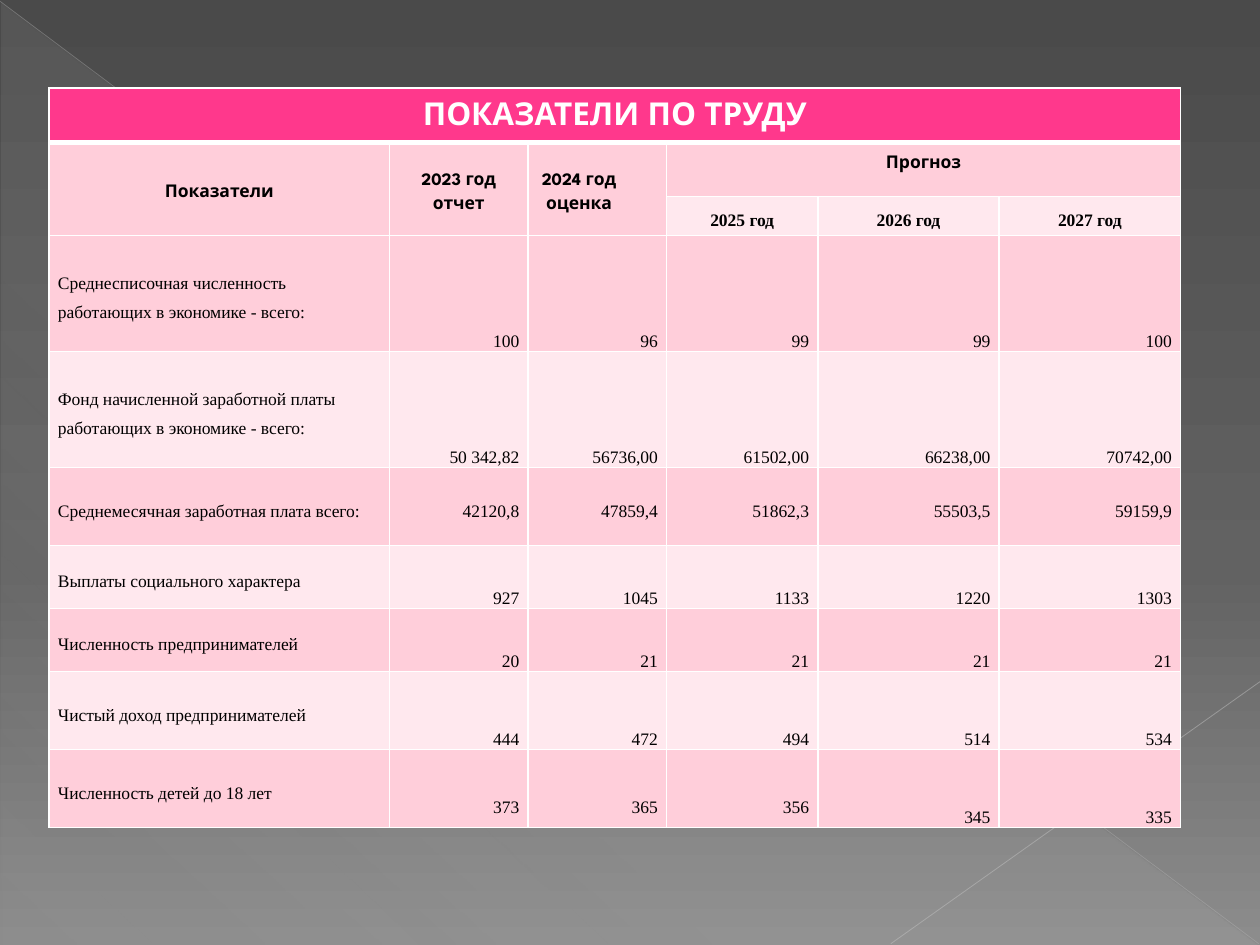
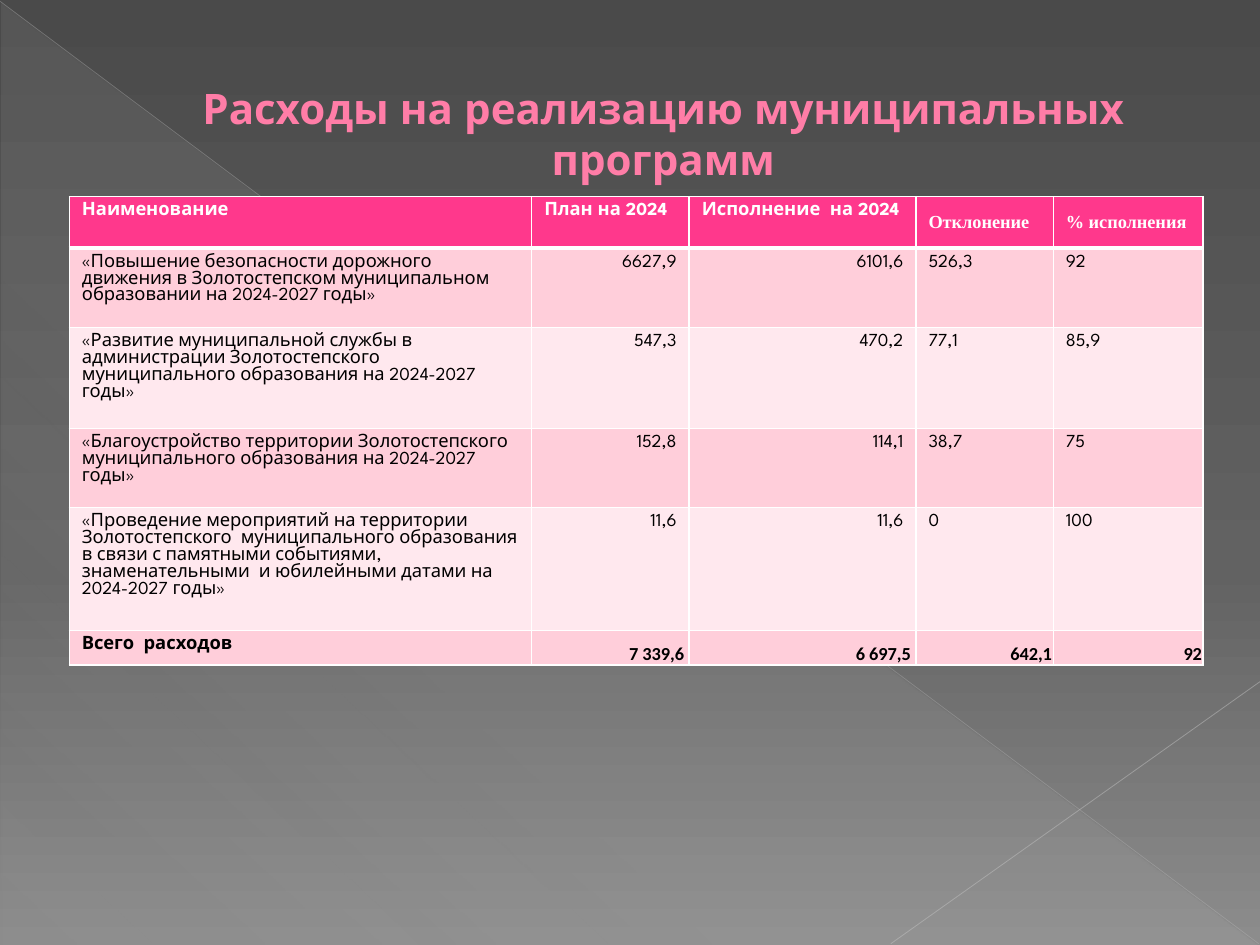
from typing import NamedTuple

from lxml.etree import SubElement
from pptx import Presentation
from pptx.dml.color import RGBColor
from pptx.enum.shapes import MSO_CONNECTOR as Connector, MSO_SHAPE as Shape
from pptx.enum.text import MSO_ANCHOR as Anchor, PP_ALIGN as Align
from pptx.oxml.ns import qn
from pptx.util import Inches, Pt

WHITE = RGBColor(0xFF, 0xFF, 0xFF)
BLACK = RGBColor(0, 0, 0)
HOT_PINK = RGBColor(0xFF, 0x38, 0x8C)
PINK = RGBColor(0xFF, 0xCE, 0xDA)
PALE_PINK = RGBColor(0xFF, 0xE8, 0xEE)
TITLE_PINK = RGBColor(0xFF, 0x7D, 0xA7)
TITLE_EDGE = RGBColor(0xB1, 0x27, 0x61)
DARK_GREY = RGBColor(0x4A, 0x4A, 0x4A)
MID_GREY = RGBColor(0x62, 0x62, 0x62)
LIGHT_GREY = RGBColor(0x8C, 0x8C, 0x8C)
VEIL = RGBColor(0xD2, 0xD2, 0xD2)
DIAGONAL = RGBColor(0xBF, 0xBF, 0xBF)
SHORT_DIAGONAL = RGBColor(0xC6, 0xC6, 0xC6)

DISPLAY = "League Spartan"
SERIF = "Times New Roman"


class Style(NamedTuple):
    font: str = DISPLAY
    size: float = 10
    colour: RGBColor = BLACK
    bold: bool = False
    align: Align = Align.LEFT
    anchor: Anchor = Anchor.TOP
    spacing: float = 1
    insets: tuple = (0.1, 0.05, 0.1, 0.05)


TIGHT = (0.07, 0, 0.07, 0)
LABOUR_HEAD = Style(bold=True, align=Align.CENTER, anchor=Anchor.MIDDLE, spacing=1.5, insets=TIGHT)
LABOUR_TITLE = LABOUR_HEAD._replace(size=18, colour=WHITE, spacing=1.15)
LABOUR_YEAR = LABOUR_HEAD._replace(font=SERIF)
LABOUR_NAME = LABOUR_YEAR._replace(bold=False, align=Align.LEFT)
LABOUR_VALUE = LABOUR_NAME._replace(align=Align.RIGHT, anchor=Anchor.BOTTOM)
LABOUR_MIDDLE = LABOUR_VALUE._replace(anchor=Anchor.MIDDLE)
LABOUR_LOWERED = LABOUR_MIDDLE._replace(insets=(0.07, 0.23, 0.07, 0))

COST_TEXT = Style(size=10.5)
COST_VALUE = COST_TEXT._replace(align=Align.RIGHT)
COST_HEAD = COST_TEXT._replace(colour=WHITE, bold=True)
COST_HEAD_SERIF = COST_HEAD._replace(font=SERIF, anchor=Anchor.MIDDLE)
COST_TOTAL = COST_VALUE._replace(font="Calibri", bold=True, anchor=Anchor.BOTTOM,
                                 insets=(0.01, 0.01, 0.01, 0))
COST_TOTAL_INSET = COST_TOTAL._replace(insets=(0.01, 0.01, 0.04, 0))

LABOUR_ROWS = [
    ("Среднесписочная численность работающих в экономике - всего:",
     "100", "96", "99", "99", "100"),
    ("Фонд начисленной заработной платы работающих в экономике - всего:",
     "50 342,82", "56736,00", "61502,00", "66238,00", "70742,00"),
    ("Среднемесячная заработная плата всего:",
     "42120,8", "47859,4", "51862,3", "55503,5", "59159,9"),
    ("Выплаты социального характера", "927", "1045", "1133", "1220", "1303"),
    ("Численность предпринимателей", "20", "21", "21", "21", "21"),
    ("Чистый доход предпринимателей", "444", "472", "494", "514", "534"),
    ("Численность детей до 18 лет", "373", "365", "356", "345", "335"),
]

COST_HEADINGS = ("Наименование", "План на 2024", "Исполнение  на 2024",
                 "Отклонение", "% исполнения")
COST_ROWS = [
    ("«Повышение безопасности дорожного движения в Золотостепском муниципальном "
     "образовании на 2024-2027 годы»", "6627,9", "6101,6", "526,3", "92"),
    ("«Развитие муниципальной службы в администрации Золотостепского\n"
     "муниципального образования на 2024-2027 годы»", "547,3", "470,2", "77,1", "85,9"),
    ("«Благоустройство территории Золотостепского муниципального образования "
     "на 2024-2027 годы»", "152,8", "114,1", "38,7", "75"),
    ("«Проведение мероприятий на территории Золотостепского  муниципального образования "
     "в связи с памятными событиями, знаменательными  и юбилейными датами "
     "на 2024-2027 годы»", "11,6", "11,6", "0", "100"),
]
COST_TOTALS = ("Всего  расходов", "7 339,6", "6 697,5", "642,1", "92")


def add_colour(parent, colour, alpha=100):
    node = SubElement(parent, qn("a:srgbClr"), val=str(colour))
    if alpha < 100:
        SubElement(node, qn("a:alpha"), val=str(alpha * 1000))


def set_gradient(fill, angle, stops):
    fill.gradient()
    fill.gradient_angle = 360 - angle
    stop_list = fill._xPr.find(qn("a:gradFill")).find(qn("a:gsLst"))
    for old_stop in list(stop_list):
        stop_list.remove(old_stop)
    for position, colour, alpha in stops:
        stop = SubElement(stop_list, qn("a:gs"), pos=str(position * 1000))
        add_colour(stop, colour, alpha)


def add_diagonal(page, start, end, colour, width, alpha):
    line = page.shapes.add_connector(Connector.STRAIGHT, *map(Inches, start + end))
    line.line.width = Pt(width)
    line.line.color.rgb = colour
    tint = next(line._element.spPr.iter(qn("a:srgbClr")))
    SubElement(tint, qn("a:alpha"), val=str(alpha * 1000))
    SubElement(line._element.spPr, qn("a:effectLst"))


def add_page(deck):
    page = deck.slides.add_slide(deck.slide_layouts[6])
    veil = page.shapes.add_shape(Shape.RIGHT_TRIANGLE, *map(Inches, (0.01, 0.02, 9.98, 7.48)))
    veil.shadow.inherit = False
    veil.line.fill.background()
    set_gradient(veil.fill, 133, [(0, VEIL, 10), (70, VEIL, 8), (100, VEIL, 1)])
    add_diagonal(page, (0, 0.01), (9.99, 7.49), DIAGONAL, 0.39, 35)
    add_diagonal(page, (10, 5.41), (7.07, 7.49), SHORT_DIAGONAL, 0.47, 45)
    return page


def write_text(frame, text, style):
    frame.word_wrap = True
    frame.vertical_anchor = style.anchor
    for index, words in enumerate(text.split("\n")):
        para = frame.add_paragraph() if index else frame.paragraphs[0]
        para.alignment = style.align
        para.line_spacing = style.spacing
        span = para.add_run()
        span.text = words
        span.font.name = style.font
        span.font.size = Pt(style.size)
        span.font.bold = style.bold
        span.font.color.rgb = style.colour


def write_cell(cell, text, style):
    (cell.margin_left, cell.margin_top,
     cell.margin_right, cell.margin_bottom) = map(Inches, style.insets)
    write_text(cell.text_frame, text, style)
    cell.vertical_anchor = style.anchor


def add_grid(page, box, widths, heights, fills):
    frame = page.shapes.add_table(len(heights), len(widths), *map(Inches, box))
    table = frame.table
    table.first_row = table.horz_banding = False
    for column, width in zip(table.columns, widths):
        column.width = Inches(width)
    for index, (row, height) in enumerate(zip(table.rows, heights)):
        row.height = Inches(height)
        for cell in row.cells:
            properties = cell._tc.get_or_add_tcPr()
            for side in "LRTB":
                width = 3 if (index, side) in ((0, "B"), (1, "T")) else 1
                edge = SubElement(properties, qn("a:ln" + side), w=str(Pt(width)))
                add_colour(SubElement(edge, qn("a:solidFill")), WHITE)
            cell.fill.solid()
            cell.fill.fore_color.rgb = fills[index]
    return table


def labour_style(row, column):
    if column == 0:
        return LABOUR_NAME
    if row == 2:
        return LABOUR_MIDDLE
    if row == len(LABOUR_ROWS) - 1 and column <= 3:
        return LABOUR_LOWERED
    return LABOUR_VALUE


def add_labour_table(page, box):
    widths = [2.7, 1.1, 1.1, 1.2, 1.44, 1.44]
    heights = [0.43, 0.43, 0.31, 0.92, 0.92, 0.62, 0.5, 0.5, 0.62, 0.62]
    fills = [HOT_PINK] + [PINK, PALE_PINK] * 4 + [PINK]
    table = add_grid(page, box, widths, heights, fills)
    table.cell(0, 0).merge(table.cell(0, 5))
    table.cell(1, 3).merge(table.cell(1, 5))
    for column in range(3):
        table.cell(1, column).merge(table.cell(2, column))
    write_cell(table.cell(0, 0), "ПОКАЗАТЕЛИ ПО ТРУДУ", LABOUR_TITLE)
    for column, heading in enumerate(("Показатели", "2023 год\nотчет", "2024 год\nоценка")):
        write_cell(table.cell(1, column), heading, LABOUR_HEAD)
    estimate = table.cell(1, 2).text_frame.paragraphs[0]
    estimate._p.get_or_add_pPr().set("marR", str(Inches(0.29)))
    write_cell(table.cell(1, 3), "Прогноз",
               LABOUR_HEAD._replace(anchor=Anchor.TOP, insets=Style().insets))
    for column, year in enumerate((2025, 2026, 2027), 3):
        write_cell(table.cell(2, column), f"{year} год", LABOUR_YEAR)
    for row, values in enumerate(LABOUR_ROWS):
        for column, value in enumerate(values):
            write_cell(table.cell(row + 3, column), value, labour_style(row, column))


def add_title(page, box, text):
    frame = page.shapes.add_textbox(*map(Inches, box)).text_frame
    write_text(frame, text, Style(size=24, colour=TITLE_PINK, bold=True, align=Align.CENTER,
                                  anchor=Anchor.MIDDLE, spacing=Pt(29)))
    para = frame.paragraphs[0]
    para._p.get_or_add_pPr().set("marL", str(Inches(0.53)))
    properties = para.runs[0].font._element
    edge = SubElement(properties, qn("a:ln"), w=str(Pt(0.5)))
    add_colour(SubElement(edge, qn("a:solidFill")), TITLE_EDGE)
    properties.insert(0, edge)


def add_cost_table(page, box):
    widths = [3.67, 1.25, 1.8, 1.09, 1.19]
    heights = [0.41, 0.63, 0.77, 0.63, 0.9, 0.24]
    fills = [HOT_PINK] + [PINK, PALE_PINK] * 2 + [PINK]
    table = add_grid(page, box, widths, heights, fills)
    head_styles = [COST_HEAD] * 3 + [COST_HEAD_SERIF] * 2
    row_styles = [COST_TEXT] + [COST_VALUE] * 2 + [COST_TEXT] * 2
    total_styles = ([COST_TEXT._replace(bold=True)] + [COST_TOTAL_INSET] * 2
                    + [COST_TOTAL] * 2)
    styles = [head_styles] + [row_styles] * len(COST_ROWS) + [total_styles]
    for row, values in enumerate([COST_HEADINGS, *COST_ROWS, COST_TOTALS]):
        for column, value in enumerate(values):
            write_cell(table.cell(row, column), value, styles[row][column])


def main():
    deck = Presentation()
    deck.slide_width, deck.slide_height = Inches(10), Inches(7.5)
    set_gradient(deck.slide_master.background.fill, 90,
                 [(0, DARK_GREY, 100), (60, MID_GREY, 100), (100, LIGHT_GREY, 100)])
    add_labour_table(add_page(deck), (0.39, 0.7, 8.98, 5.86))
    cost_page = add_page(deck)
    add_title(cost_page, (0.5, 0.29, 9, 1.53), "Расходы на реализацию муниципальных программ")
    add_cost_table(cost_page, (0.55, 1.56, 9, 3.58))
    deck.save("out.pptx")


if __name__ == "__main__":
    main()
